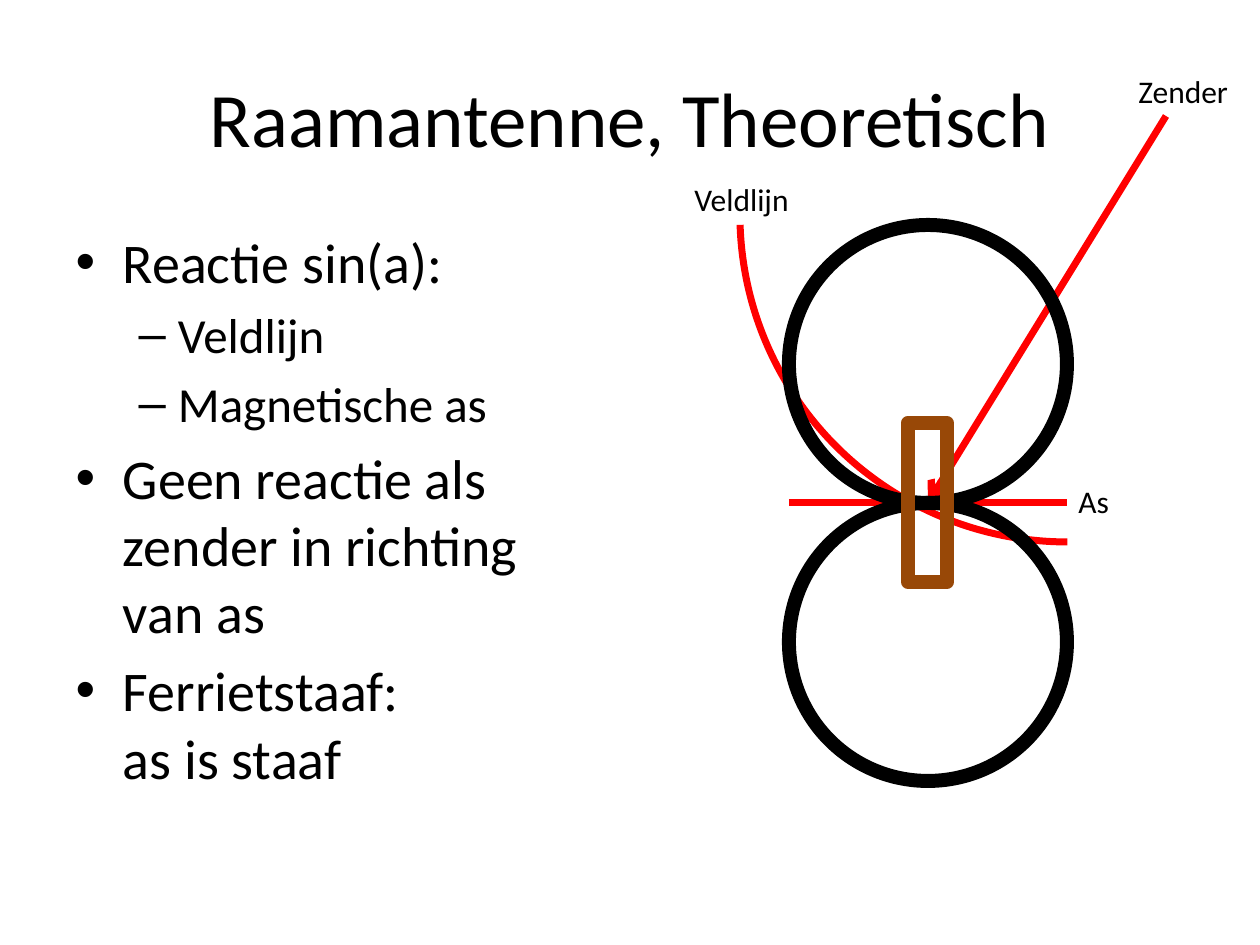
from dataclasses import dataclass

from lxml.etree import SubElement
from pptx import Presentation
from pptx.dml.color import RGBColor
from pptx.enum.shapes import MSO_CONNECTOR as Connector, MSO_SHAPE as Preset
from pptx.enum.text import MSO_ANCHOR as Anchor, MSO_AUTO_SIZE as AutoSize, PP_ALIGN as Align
from pptx.oxml.ns import qn
from pptx.util import Emu, Pt

EMU_PER_PX = 914400 / 126
FONT = "Calibri"
COLORS = {"text": "000000", "pattern": "000000", "field": "FF0000", "antenna": "984807"}
CENTER_X, CENTER_Y = 928, 503
LOBE = 278


@dataclass(frozen=True)
class Box:
    left: int
    top: int
    width: int
    height: int


@dataclass(frozen=True)
class Line:
    start: tuple[int, int]
    end: tuple[int, int]
    arrow: bool = False


@dataclass(frozen=True)
class Outline:
    preset: Preset
    box: Box
    color: str
    weight: int
    angles: tuple[float, ...] = ()


@dataclass(frozen=True)
class Label:
    text: str
    box: Box


@dataclass(frozen=True)
class Bullet:
    text: str
    level: int = 0


TITLE_BOX = Box(63, 38, 1134, 158)
BODY_BOX = Box(63, 221, 537, 624)
BULLET_SIZES = (32, 28)

BULLETS = [
    Bullet("Reactie sin(a):"),
    Bullet("Veldlijn", 1),
    Bullet("Magnetische as", 1),
    Bullet("Geen reactie als zender in richting van as"),
    Bullet("Ferrietstaaf: \nas is staaf"),
]
LINES = [
    Line((CENTER_X - LOBE // 2, CENTER_Y), (CENTER_X + LOBE // 2, CENTER_Y)),
    Line((1166, 116), (CENTER_X, CENTER_Y), arrow=True),
]
OUTLINES = [
    Outline(Preset.ARC, Box(740, -113, 655, 655), "field", 4, (90, 178.18)),
    Outline(Preset.OVAL, Box(CENTER_X - LOBE // 2, CENTER_Y - LOBE, LOBE, LOBE), "pattern", 8),
    Outline(Preset.OVAL, Box(CENTER_X - LOBE // 2, CENTER_Y, LOBE, LOBE), "pattern", 8),
    Outline(Preset.RECTANGLE, Box(908, 423, 39, 159), "antenna", 8),
]
LABELS = [
    Label("Zender", Box(1126, 66, 116, 50)),
    Label("As", Box(1066, 476, 57, 50)),
    Label("Veldlijn", Box(682, 174, 121, 50)),
]


def px(length: int) -> Emu:
    return Emu(round(length * EMU_PER_PX))


def bounds(box: Box) -> tuple[Emu, ...]:
    return px(box.left), px(box.top), px(box.width), px(box.height)


def color(name: str) -> RGBColor:
    return RGBColor.from_string(COLORS[name])


def place(shape, box: Box) -> None:
    shape.left, shape.top, shape.width, shape.height = bounds(box)


def add_run(paragraph, text: str, size: int) -> None:
    run = paragraph.add_run()
    run.text = text
    run.font.size = Pt(size)
    run.font.name = FONT
    run.font.color.rgb = color("text")


def fill_title(shape, text: str) -> None:
    place(shape, TITLE_BOX)
    frame = shape.text_frame
    frame.vertical_anchor = Anchor.MIDDLE
    frame.auto_size = AutoSize.NONE
    paragraph = frame.paragraphs[0]
    paragraph.alignment = Align.CENTER
    add_run(paragraph, text, 44)


def fill_body(shape, bullets: list[Bullet]) -> None:
    place(shape, BODY_BOX)
    frame = shape.text_frame
    frame.auto_size = AutoSize.NONE
    for index, bullet in enumerate(bullets):
        paragraph = frame.add_paragraph() if index else frame.paragraphs[0]
        paragraph.level = bullet.level
        for row, text in enumerate(bullet.text.split("\n")):
            if row:
                paragraph.add_line_break()
            add_run(paragraph, text, BULLET_SIZES[bullet.level])


def add_line(slide, line: Line) -> None:
    points = [px(value) for value in (*line.start, *line.end)]
    connector = slide.shapes.add_connector(Connector.STRAIGHT, *points)
    connector.line.color.rgb = color("field")
    connector.line.width = Pt(4)
    if line.arrow:
        SubElement(connector.line._get_or_add_ln(), qn("a:tailEnd"), type="arrow")
    SubElement(connector._element.spPr, qn("a:effectLst"))


def add_outline(slide, outline: Outline) -> None:
    shape = slide.shapes.add_shape(outline.preset, *bounds(outline.box))
    shape.shadow.inherit = False
    shape.fill.background()
    shape.line.color.rgb = color(outline.color)
    shape.line.width = Pt(outline.weight)
    for index, angle in enumerate(outline.angles):
        shape.adjustments[index] = angle * 60000 / 100000


def add_label(slide, label: Label) -> None:
    frame = slide.shapes.add_textbox(*bounds(label.box)).text_frame
    frame.word_wrap = False
    frame.auto_size = AutoSize.SHAPE_TO_FIT_TEXT
    add_run(frame.paragraphs[0], label.text, 18)


def main() -> None:
    presentation = Presentation()
    presentation.slide_width, presentation.slide_height = px(1260), px(945)
    slide = presentation.slides.add_slide(presentation.slide_layouts[1])
    fill_title(slide.shapes.title, "Raamantenne, Theoretisch")
    fill_body(slide.placeholders[1], BULLETS)
    for line in LINES:
        add_line(slide, line)
    for outline in OUTLINES:
        add_outline(slide, outline)
    for label in LABELS:
        add_label(slide, label)
    presentation.save("out.pptx")


if __name__ == "__main__":
    main()
